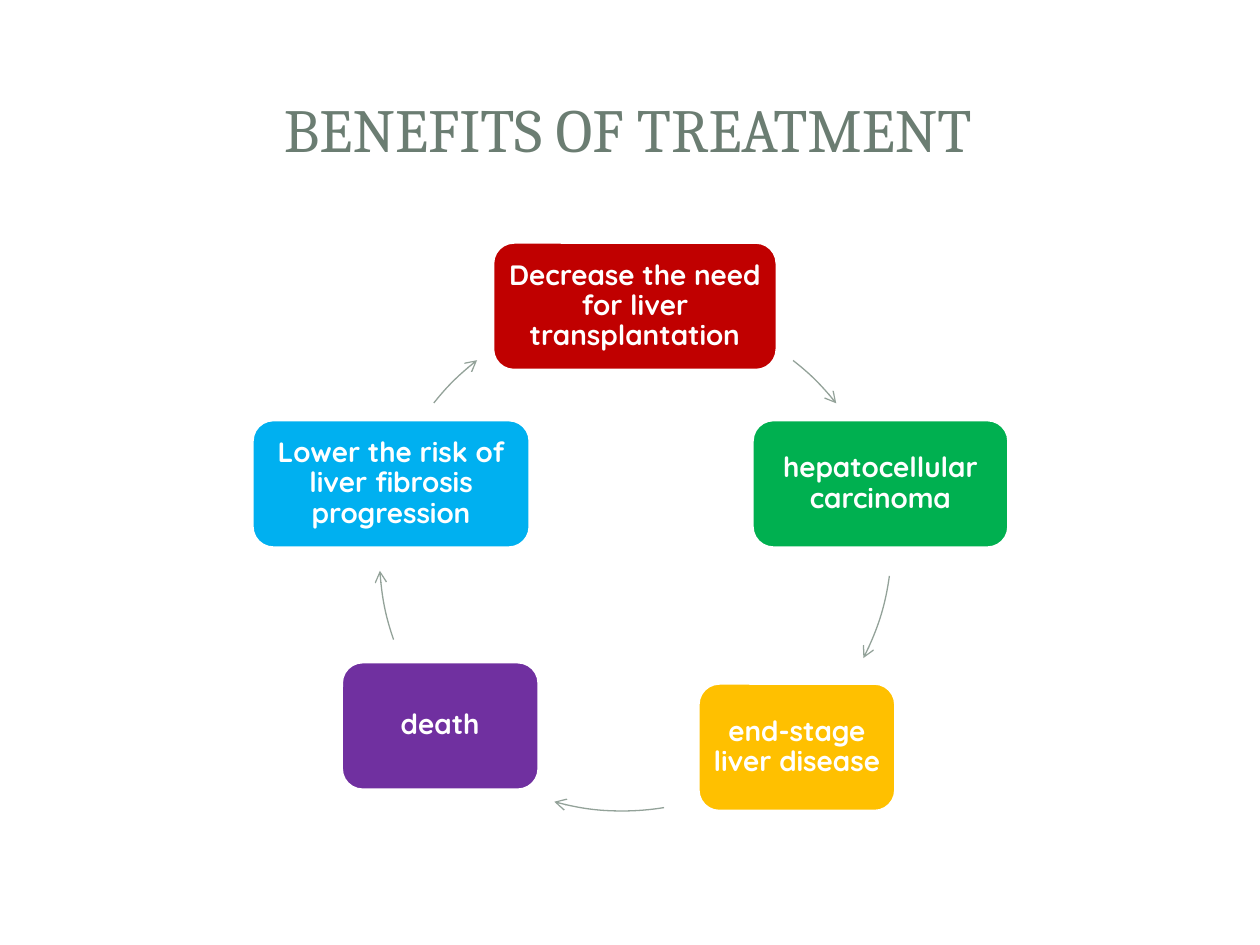
from dataclasses import dataclass

from pptx import Presentation
from pptx.dml.color import RGBColor
from pptx.enum.shapes import MSO_SHAPE as Preset
from pptx.enum.text import MSO_ANCHOR as Anchor, PP_ALIGN as Align
from pptx.oxml.ns import qn
from pptx.slide import Slide
from pptx.util import Cm, Pt
from lxml.etree import SubElement

WHITE = RGBColor(0xFF, 0xFF, 0xFF)
SAGE = RGBColor(0x6B, 0x7D, 0x72)
GREY = RGBColor(0x93, 0xA2, 0x99)
RED = RGBColor(0xC0, 0x00, 0x00)
GREEN = RGBColor(0x00, 0xB0, 0x50)
AMBER = RGBColor(0xFF, 0xC0, 0x00)
PURPLE = RGBColor(0x70, 0x30, 0xA0)
BLUE = RGBColor(0x00, 0xB0, 0xF0)

BENEFIT_HEIGHT = 2.59
BENEFIT_INSET = 0.18
CYCLE_DIAMETER = 10.36
ADJUSTMENT_PER_DEGREE = 0.6


@dataclass
class Benefit:
    text: str
    left: float
    top: float
    width: float
    color: RGBColor


@dataclass
class CycleArrow:
    left: float
    top: float
    start_degrees: float
    end_degrees: float


BENEFITS = [
    Benefit("Decrease the need for liver transplantation", 9.93, 4.88, 5.74, RED),
    Benefit("hepatocellular carcinoma", 15.16, 8.46, 5.18, GREEN),
    Benefit("end-stage liver disease", 14.07, 13.77, 3.99, AMBER),
    Benefit("death", 6.88, 13.34, 3.99, PURPLE),
    Benefit("Lower the risk of liver fibrosis progression", 5.08, 8.46, 5.61, BLUE),
]

CYCLE_ARROWS = [
    CycleArrow(7.62, 6.17, 308, 321.6),
    CycleArrow(7.62, 5.72, 7.9, 27.2),
    CycleArrow(7.37, 5.99, 80.7, 105.4),
    CycleArrow(7.65, 6.02, 160.9, 176.6),
    CycleArrow(7.62, 6.17, 218.5, 232.1),
]


def set_heading(slide: Slide, text: str) -> None:
    heading = slide.shapes.title
    heading.left, heading.top = Cm(1.19), Cm(1.14)
    heading.width, heading.height = Cm(22.94), Cm(2.9)
    frame = heading.text_frame
    frame.text = text
    frame.vertical_anchor = Anchor.MIDDLE
    paragraph = frame.paragraphs[0]
    paragraph.alignment = Align.CENTER
    font = paragraph.runs[0].font
    font.name, font.size = "Cambria", Pt(35)
    font.color.rgb = SAGE


def draw_benefit(slide: Slide, benefit: Benefit) -> None:
    box = slide.shapes.add_shape(
        Preset.ROUNDED_RECTANGLE,
        Cm(benefit.left), Cm(benefit.top), Cm(benefit.width), Cm(BENEFIT_HEIGHT),
    )
    box.shadow.inherit = False
    box.fill.solid()
    box.fill.fore_color.rgb = benefit.color
    box.line.color.rgb = WHITE
    box.line.width = Pt(2)
    frame = box.text_frame
    frame.word_wrap = True
    frame.vertical_anchor = Anchor.MIDDLE
    frame.margin_left = frame.margin_right = Cm(BENEFIT_INSET)
    frame.margin_top = frame.margin_bottom = Cm(BENEFIT_INSET)
    frame.text = benefit.text
    paragraph = frame.paragraphs[0]
    paragraph.alignment = Align.CENTER
    paragraph.line_spacing = 0.9
    font = paragraph.runs[0].font
    font.name, font.size, font.bold = "Quicksand", Pt(16), True
    font.color.rgb = WHITE


def draw_cycle_arrow(slide: Slide, arrow: CycleArrow) -> None:
    arc = slide.shapes.add_shape(
        Preset.ARC,
        Cm(arrow.left), Cm(arrow.top), Cm(CYCLE_DIAMETER), Cm(CYCLE_DIAMETER),
    )
    arc.adjustments[0] = arrow.start_degrees * ADJUSTMENT_PER_DEGREE
    arc.adjustments[1] = arrow.end_degrees * ADJUSTMENT_PER_DEGREE
    arc.shadow.inherit = False
    arc.fill.background()
    arc.line.color.rgb = GREY
    arc.line.width = Pt(0.75)
    SubElement(arc.line._get_or_add_ln(), qn("a:tailEnd"), type="arrow")


def main() -> None:
    deck = Presentation()
    deck.slide_width, deck.slide_height = Cm(25.4), Cm(19.05)
    slide = deck.slides.add_slide(deck.slide_layouts[5])
    set_heading(slide, "BENEFITS OF TREATMENT")
    for benefit, arrow in zip(BENEFITS, CYCLE_ARROWS):
        draw_benefit(slide, benefit)
        draw_cycle_arrow(slide, arrow)
    deck.save("out.pptx")


if __name__ == "__main__":
    main()
